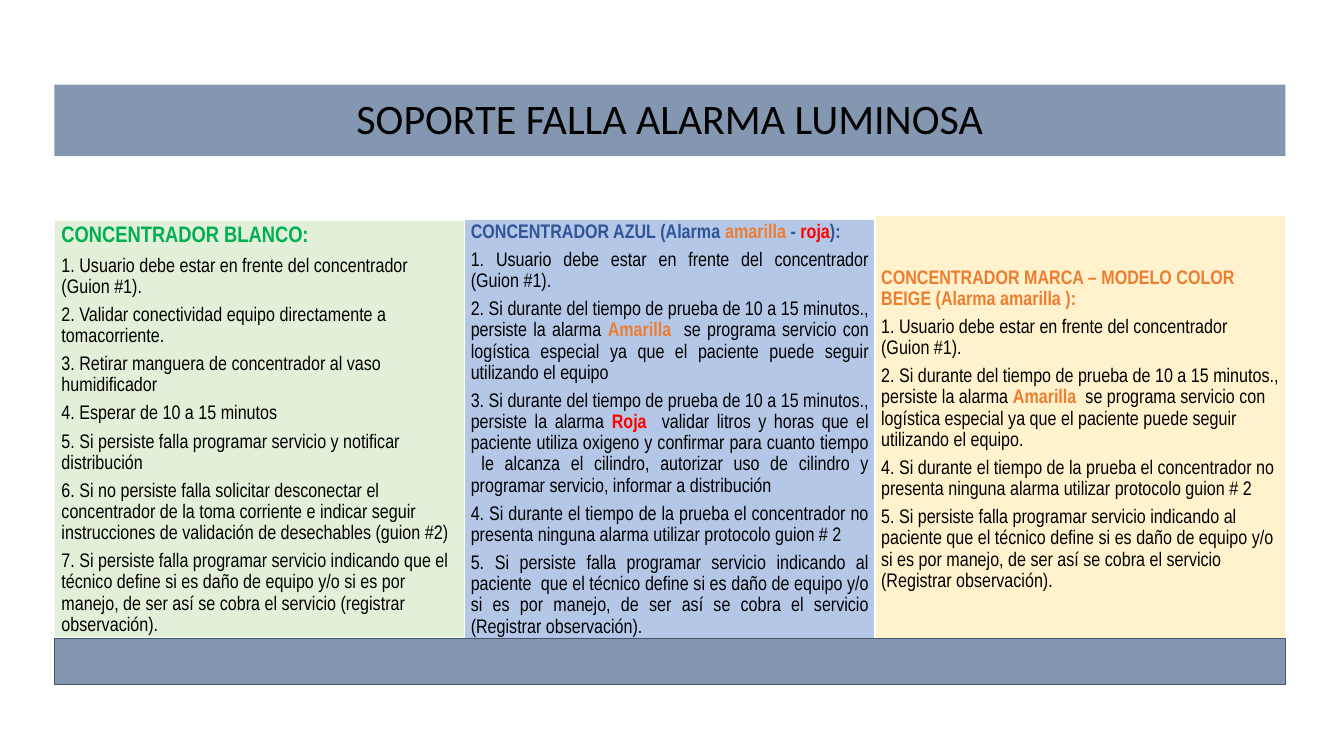
from dataclasses import dataclass

from pptx import Presentation
from pptx.dml.color import RGBColor
from pptx.enum import shapes, text
from pptx.util import Inches, Pt

LEFT, COLUMN = 0.54, 4.07
WIDTH = 3 * COLUMN
PANEL_MIDDLE = 4.26
BLACK, WHITE, SLATE = "000000", "FFFFFF", "8497B0"
GREEN, NAVY, ORANGE, RED = "00B050", "2F5597", "ED7D31", "FF0000"
LEFT_ALIGN, JUSTIFY, CENTER = text.PP_ALIGN.LEFT, text.PP_ALIGN.JUSTIFY, text.PP_ALIGN.CENTER


@dataclass
class Span:
    text: str
    color: str = BLACK
    bold: bool = False


@dataclass
class Panel:
    fill: str
    height: float
    inset: float
    align: text.PP_ALIGN
    heading: list[Span]
    steps: list[list[Span]]
    heading_size: int = 14


def rgb(color: str) -> RGBColor:
    return RGBColor.from_string(color)


def add_box(slide, left: float, top: float, width: float, height: float,
            fill: str, line: str = "", line_width: float = 1):
    sp = slide.shapes.add_shape(shapes.MSO_SHAPE.RECTANGLE, Inches(left), Inches(top),
                                Inches(width), Inches(height))
    sp.shadow.inherit = False
    sp.fill.solid()
    sp.fill.fore_color.rgb = rgb(fill)
    if line:
        sp.line.color.rgb = rgb(line)
        sp.line.width = Pt(line_width)
    else:
        sp.line.fill.background()
    return sp


def set_insets(tf, inset: float) -> None:
    tf.word_wrap = True
    tf.vertical_anchor = text.MSO_ANCHOR.MIDDLE
    tf.margin_left = tf.margin_top = tf.margin_right = tf.margin_bottom = Inches(inset)


def write(p, spans: list[Span], size: int, font: str, align: text.PP_ALIGN) -> None:
    p.alignment = align
    p.line_spacing = 0.9
    p.space_after = Pt(round(0.35 * size, 1))
    for span in spans:
        r = p.add_run()
        r.text = span.text
        r.font.size = Pt(size)
        r.font.name = font
        r.font.bold = span.bold
        r.font.color.rgb = rgb(span.color)


def add_panel(slide, column: int, panel: Panel) -> None:
    sp = add_box(slide, LEFT + column * COLUMN, PANEL_MIDDLE - panel.height / 2,
                 COLUMN, panel.height, panel.fill, WHITE)
    tf = sp.text_frame
    set_insets(tf, panel.inset)
    write(tf.paragraphs[0], panel.heading, panel.heading_size, "Arial Narrow", panel.align)
    for step in panel.steps:
        write(tf.add_paragraph(), step, 14, "Arial Narrow", panel.align)


IN_FRONT = [Span("1. Usuario debe estar en frente del concentrador (Guion #1).")]
NO_ALARM = [Span("4. Si durante el tiempo de la prueba el concentrador no presenta ninguna "
                 "alarma utilizar protocolo guion # 2")]
TEST_TIME = "Si durante del tiempo de prueba de 10 a 15 minutos., persiste la alarma "
LOGISTICS = (" se programa servicio con logística especial ya que el paciente puede seguir "
             "utilizando el equipo")
DAMAGE = ("que el técnico define si es daño de equipo y/o si es por manejo, "
          "de ser así se cobra el servicio")
TELL_PATIENT = "5. Si persiste falla programar servicio indicando al paciente "
YELLOW_ALARM = [Span("2. " + TEST_TIME), Span("Amarilla ", ORANGE, True)]

PANELS = [
    Panel("E2F0D9", 4.14, 0.07, LEFT_ALIGN,
          [Span("CONCENTRADOR BLANCO:", GREEN, True)],
          [IN_FRONT,
           [Span("2. Validar conectividad equipo directamente a tomacorriente.")],
           [Span("3. Retirar manguera de concentrador al vaso humidificador")],
           [Span("4. Esperar de 10 a 15 minutos")],
           [Span("5. Si persiste falla programar servicio y notificar distribución")],
           [Span("6. Si no persiste falla solicitar desconectar el concentrador de la toma "
                 "corriente e indicar seguir instrucciones de validación de desechables "
                 "(guion #2)")],
           [Span(f"7. Si persiste falla programar servicio indicando {DAMAGE} "
                 "(registrar observación).")]],
          heading_size=16),
    Panel("B4C7E7", 4.17, 0.06, JUSTIFY,
          [Span("CONCENTRADOR AZUL (Alarma", NAVY, True), Span(" amarilla ", ORANGE, True),
           Span("- ", NAVY, True), Span("roja", RED, True), Span("):", NAVY, True)],
          [IN_FRONT,
           YELLOW_ALARM + [Span(LOGISTICS)],
           [Span("3. " + TEST_TIME), Span("Roja ", RED, True),
            Span(" validar litros y horas que el paciente utiliza oxigeno y confirmar para "
                 "cuanto tiempo  le alcanza el cilindro, autorizar uso de cilindro y "
                 "programar servicio, informar a distribución ")],
           NO_ALARM,
           [Span(f"{TELL_PATIENT} {DAMAGE} (Registrar observación). ")]]),
    Panel("FFF2CC", 4.25, 0.06, LEFT_ALIGN,
          [Span("CONCENTRADOR MARCA – MODELO COLOR BEIGE (Alarma amarilla ):", ORANGE, True)],
          [IN_FRONT,
           YELLOW_ALARM + [Span(LOGISTICS + ".")],
           NO_ALARM,
           [Span(f"{TELL_PATIENT}{DAMAGE} (Registrar observación).")]]),
]


def main() -> None:
    prs = Presentation()
    prs.slide_width, prs.slide_height = Inches(13.33), Inches(7.5)
    slide = prs.slides.add_slide(prs.slide_layouts[6])

    title = add_box(slide, LEFT, 0.84, WIDTH, 0.71, SLATE)
    set_insets(title.text_frame, 0.12)
    write(title.text_frame.paragraphs[0], [Span("SOPORTE FALLA ALARMA LUMINOSA")],
          30, "Calibri", CENTER)

    for column, panel in enumerate(PANELS):
        add_panel(slide, column, panel)

    add_box(slide, LEFT, 6.33, WIDTH, 0.46, SLATE, "44546A", 0.75)
    prs.save("out.pptx")


if __name__ == "__main__":
    main()
